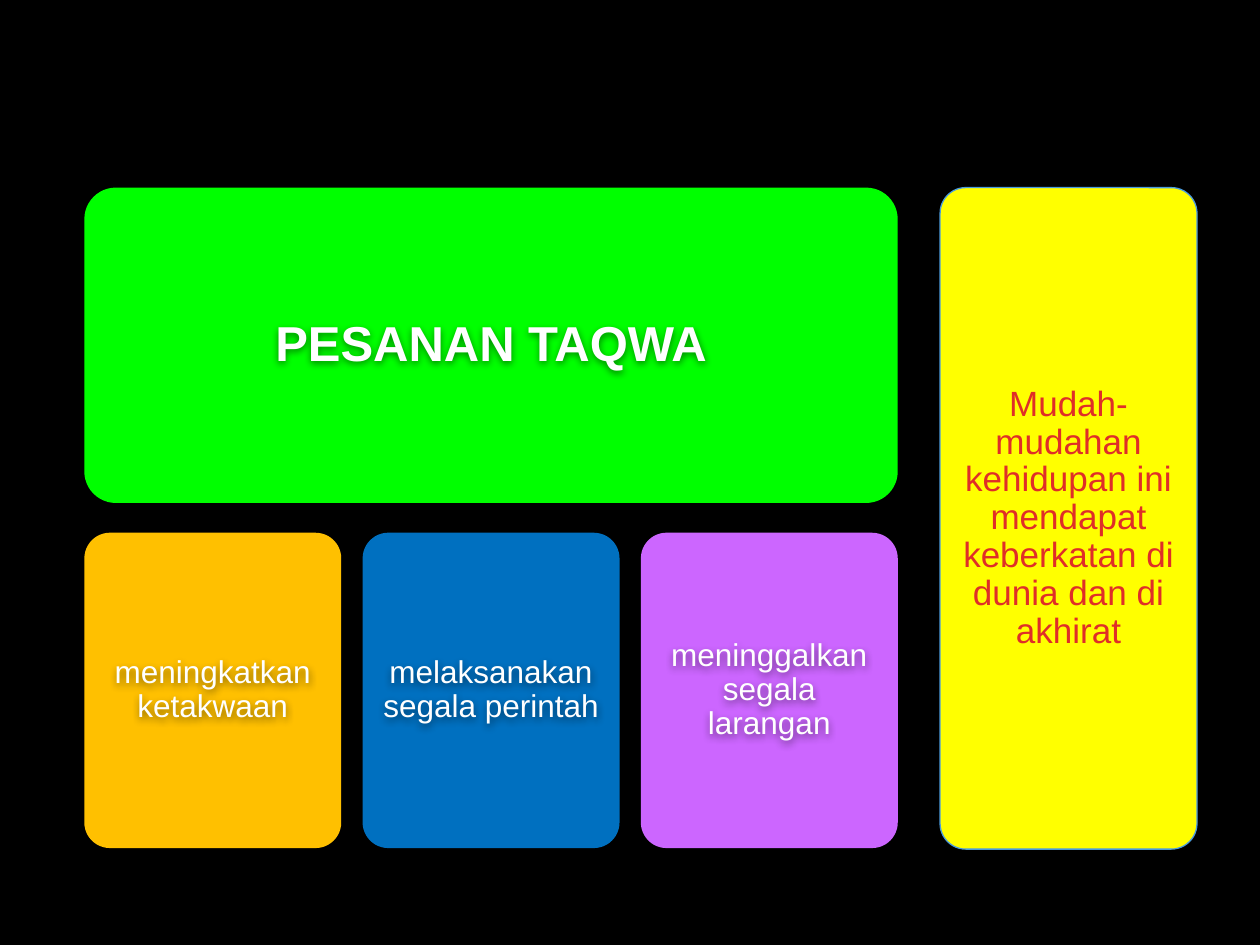
from lxml import etree
from pptx import Presentation
from pptx.dml.color import RGBColor
from pptx.enum import shapes, text
from pptx.oxml import ns
from pptx.util import Pt

SHADOW = (
    f'<a:effectLst xmlns:a="{ns.nsdecls("a").split(chr(34))[1]}">'
    '<a:outerShdw blurRad="57150" dist="19050" dir="5400000" algn="ctr" rotWithShape="0">'
    '<a:srgbClr val="000000"><a:alpha val="48000"/></a:srgbClr>'
    '</a:outerShdw></a:effectLst>'
)


def rgb(value):
    return RGBColor.from_string(value)


def add_shadow(sp):
    sp_pr = sp._element.spPr
    for old in sp_pr.findall(ns.qn("a:effectLst")):
        sp_pr.remove(old)
    sp_pr.append(etree.fromstring(SHADOW))


prs = Presentation()
prs.slide_width, prs.slide_height = Pt(720), Pt(540)
slide = prs.slides.add_slide(prs.slide_layouts[6])
slide.background.fill.solid()
slide.background.fill.fore_color.rgb = rgb("000000")

left, top, width, height = 48.2, 107.2, 146.8, 180.2
step = 159
row2 = 304.4
header_width = 2 * step + width
side_left = 537.2
side_height = row2 + height - top

# left, top, width, height, fill, text, size, text colour, inset
cards = [
    (left, top, header_width, height, "00FF00", "PESANAN TAQWA", 28, "FFFFFF", 8.4),
    (side_left, top, width, side_height + 0.6, "FFFF00",
     "Mudah-mudahan kehidupan ini mendapat keberkatan di dunia dan di akhirat",
     20, "DF2E28", 6),
]
details = [
    ("FFC000", "meningkatkan ketakwaan"),
    ("0070C0", "melaksanakan segala perintah"),
    ("CC66FF", "meninggalkan segala larangan"),
]
for i, (fill, label) in enumerate(details):
    cards.append((left + i * step, row2, width, height, fill, label, 18, "FFFFFF", 5.4))

for x, y, w, h, fill, label, size, color, inset in cards:
    is_side = x == side_left
    sp = slide.shapes.add_shape(
        shapes.MSO_SHAPE.ROUNDED_RECTANGLE, Pt(x), Pt(y), Pt(w), Pt(h))
    sp.adjustments[0] = 0.1
    sp.shadow.inherit = False
    sp.fill.solid()
    sp.fill.fore_color.rgb = rgb(fill)
    if is_side:
        sp.line.color.rgb = rgb("4A9BDC")
        sp.line.width = Pt(0.75)
    else:
        sp.line.fill.background()

    # The label box sits inside the rounded corners
    pad = 0.03 * min(w, h)
    box = slide.shapes.add_textbox(
        Pt(x + pad), Pt(y + pad), Pt(w - 2 * pad), Pt(h - 2 * pad))
    tf = box.text_frame
    tf.word_wrap = True
    tf.vertical_anchor = text.MSO_ANCHOR.MIDDLE
    tf.margin_left = tf.margin_right = tf.margin_top = tf.margin_bottom = Pt(inset)
    p = tf.paragraphs[0]
    p.text = label
    p.alignment = text.PP_ALIGN.CENTER
    p.line_spacing = 0.9
    p.font.name = "Arial"
    p.font.size = Pt(size)
    p.font.bold = size == 28
    p.font.color.rgb = rgb(color)

    if not is_side:
        add_shadow(sp)
        add_shadow(box)

prs.save("out.pptx")
